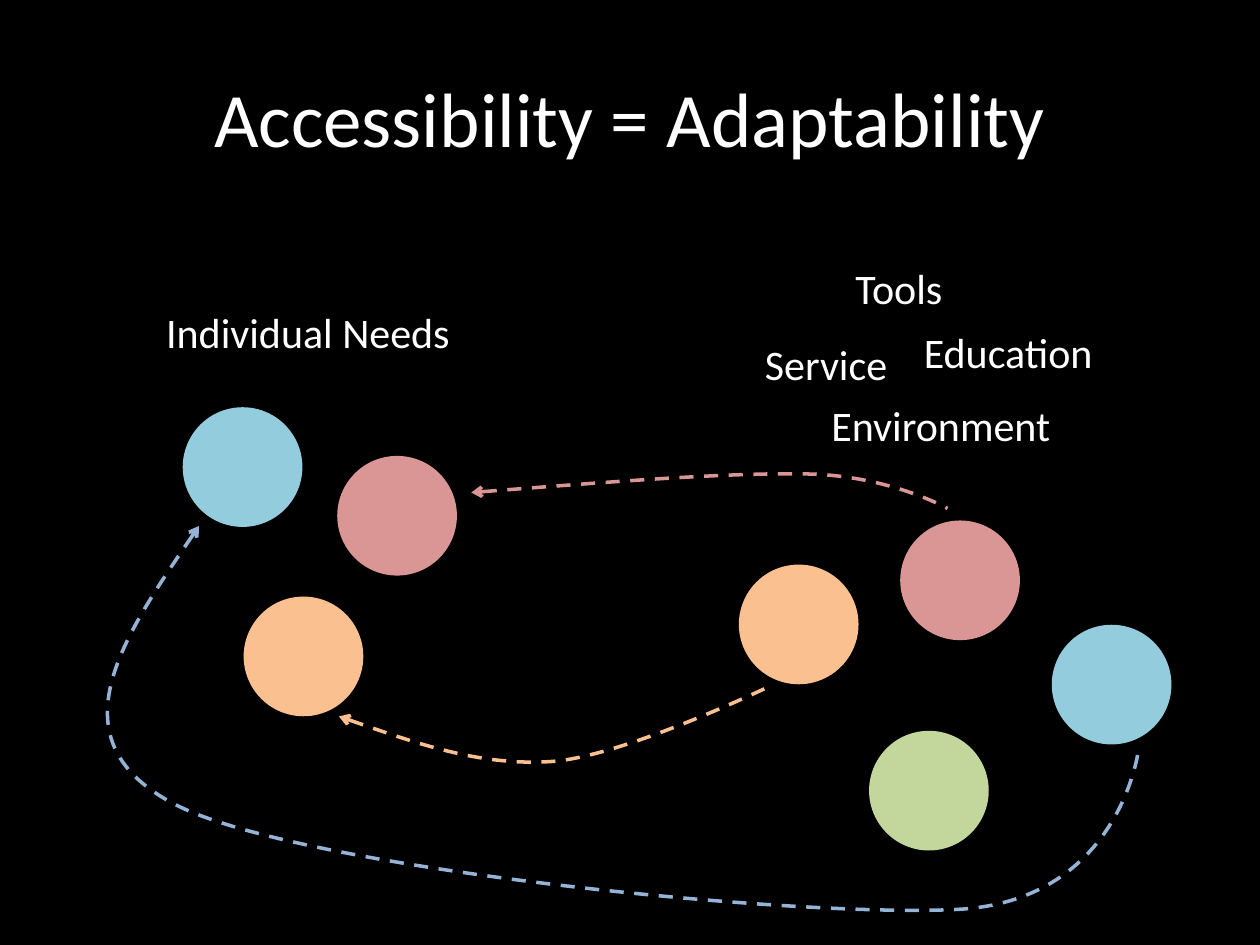
from dataclasses import dataclass

import pptx
from lxml import etree
from pptx import util as u
from pptx.dml.color import RGBColor
from pptx.enum import dml, shapes, text
from pptx.oxml import ns

BLACK = RGBColor(0x00, 0x00, 0x00)
WHITE = RGBColor(0xFF, 0xFF, 0xFF)
AQUA = RGBColor(0x93, 0xCD, 0xDD)
ORANGE = RGBColor(0xFA, 0xC0, 0x90)
PINK = RGBColor(0xD9, 0x96, 0x94)
GREEN = RGBColor(0xC3, 0xD6, 0x9B)
BLUE = RGBColor(0x95, 0xB3, 0xD7)

FONT = "Calibri"
DIAMETER = 68.4
STEPS = 24  # samples per curve section when measuring its extent

Point = tuple[float, float]


@dataclass(frozen=True)
class Label:
    wording: str
    left: float
    top: float
    width: float
    height: float = 36
    size: float = 24
    is_title: bool = False


@dataclass(frozen=True)
class Circle:
    left: float
    top: float
    color: RGBColor


@dataclass(frozen=True)
class CurvedArrow:
    """A chain of cubic curves; the arrowhead is at the first point."""
    color: RGBColor
    points: tuple[Point, ...]


LABELS = (
    Label("Accessibility = Adaptability", 36, 21.6, 648, 90, 44, True),
    Label("Individual Needs", 87.84, 171.36, 178.56),
    Label("Service", 430, 190.08, 84.96),
    Label("Education", 520.8, 182.88, 113.04),
    Label("Tools", 481.68, 146.6, 66.96),
    Label("Environment", 468, 224.64, 141.84),
)

CIRCLES = (
    # Individual needs
    Circle(104.4, 232.7, AQUA),
    Circle(139.2, 340.9, ORANGE),
    Circle(192.7, 260.5, PINK),
    # What can be adapted
    Circle(601, 357, AQUA),
    Circle(422.2, 322.6, ORANGE),
    Circle(514.4, 297.4, PINK),
    Circle(496.6, 417.6, GREEN),
)

ARROWS = (
    CurvedArrow(PINK, (
        (269.28, 281.52), (344.16, 275.76), (419.76, 269.6), (465.12, 271),
        (510.48, 272.88), (541.44, 290.6), (541.44, 290.6))),
    CurvedArrow(ORANGE, (
        (193.68, 409.4), (234, 423.36), (273.6, 437.76), (314.64, 435.2),
        (354.96, 432.72), (437.76, 393.12), (437.76, 393.12))),
    CurvedArrow(BLUE, (
        (113.76, 300.6), (71.6, 362.16), (29, 424), (101.5, 460.4),
        (174.24, 496.8), (457.2, 524.88), (548.64, 519.6),
        (640.08, 514.08), (650.6, 428.6), (650.6, 428.6))),
)


def add_label(page, label: Label) -> None:
    box = page.shapes.add_textbox(u.Pt(label.left), u.Pt(label.top),
                                  u.Pt(label.width), u.Pt(label.height))
    frame = box.text_frame
    frame.text = label.wording
    frame.word_wrap = label.is_title
    para = frame.paragraphs[0]
    if label.is_title:
        frame.vertical_anchor = text.MSO_ANCHOR.MIDDLE
        para.alignment = text.PP_ALIGN.CENTER
    else:
        frame.auto_size = text.MSO_AUTO_SIZE.SHAPE_TO_FIT_TEXT
    span = para.runs[0]
    span.font.name = FONT
    span.font.size = u.Pt(label.size)
    span.font.color.rgb = WHITE


def add_circle(page, circle: Circle) -> None:
    disc = page.shapes.add_shape(
        shapes.MSO_SHAPE.OVAL, u.Pt(circle.left), u.Pt(circle.top),
        u.Pt(DIAMETER), u.Pt(DIAMETER))
    disc.shadow.inherit = False
    disc.fill.solid()
    disc.fill.fore_color.rgb = circle.color
    disc.line.fill.background()


def curve_extent(points: tuple[Point, ...]) -> tuple[Point, Point]:
    """Return the top-left and bottom-right corners around the curve."""
    samples = []
    for first in range(0, len(points) - 1, 3):
        controls = points[first:first + 4]
        for step in range(STEPS + 1):
            t = step / STEPS
            weights = ((1 - t) ** 3, 3 * t * (1 - t) ** 2,
                       3 * t ** 2 * (1 - t), t ** 3)
            samples.append([sum(w * p[axis] for w, p in zip(weights, controls))
                            for axis in (0, 1)])
    xs, ys = zip(*samples)
    return (min(xs), min(ys)), (max(xs), max(ys))


def add_curved_arrow(page, arrow: CurvedArrow) -> None:
    (left, top), (right, bottom) = curve_extent(arrow.points)
    builder = page.shapes.build_freeform(u.Pt(left), u.Pt(top))
    builder.add_line_segments([(u.Pt(right), u.Pt(bottom))], close=False)
    curve = builder.convert_to_shape()

    # Give the outline its curve sections
    outline = next(curve.element.iter(ns.qn("a:path")))
    for segment in list(outline):
        outline.remove(segment)
    sections = [("a:moveTo", arrow.points[:1])]
    sections += [("a:cubicBezTo", arrow.points[first:first + 3])
                 for first in range(1, len(arrow.points), 3)]
    for tag, points in sections:
        section = etree.SubElement(outline, ns.qn(tag))
        for x, y in points:
            etree.SubElement(section, ns.qn("a:pt"),
                             x=str(u.Pt(x) - curve.left),
                             y=str(u.Pt(y) - curve.top))

    # Dashed line with an open arrowhead
    curve.shadow.inherit = False
    curve.fill.background()
    curve.line.color.rgb = arrow.color
    curve.line.width = u.Pt(2)
    curve.line.dash_style = dml.MSO_LINE.DASH
    line = curve.element.spPr.find(ns.qn("a:ln"))
    etree.SubElement(line, ns.qn("a:headEnd"), type="arrow")


def main() -> None:
    deck = pptx.Presentation()
    deck.slide_width, deck.slide_height = u.Pt(720), u.Pt(540)
    page = deck.slides.add_slide(deck.slide_layouts[6])
    page.background.fill.solid()
    page.background.fill.fore_color.rgb = BLACK

    # Title and labels
    for label in LABELS:
        add_label(page, label)

    # Needs and matching adaptations
    for circle in CIRCLES:
        add_circle(page, circle)

    # Dashed arrows from adaptation to need
    for arrow in ARROWS:
        add_curved_arrow(page, arrow)

    deck.save("out.pptx")


if __name__ == "__main__":
    main()
